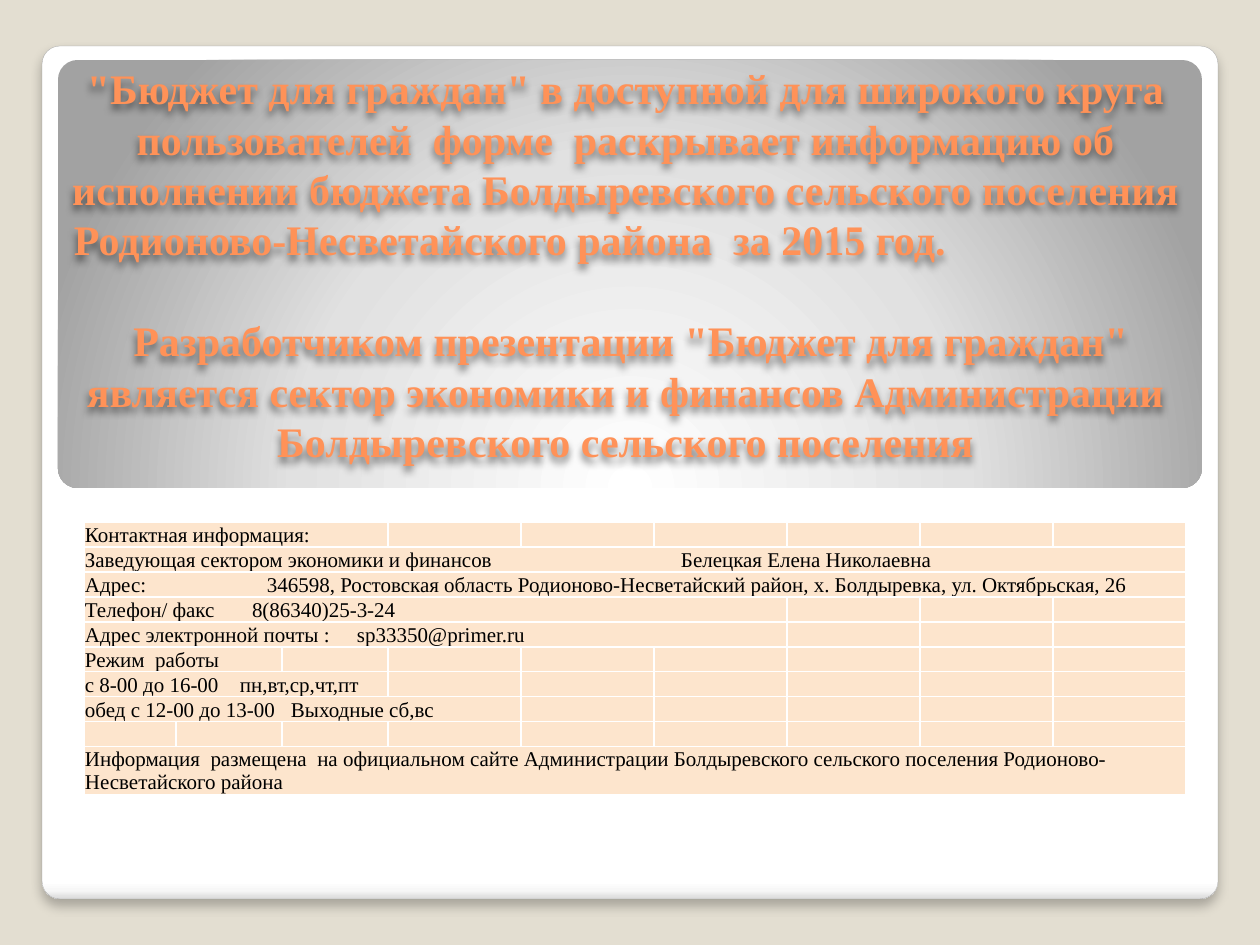
"""Builds the contact slide of a citizens' budget presentation."""
import pptx
import pptx.dml.color
import pptx.enum.shapes
import pptx.enum.text
import pptx.oxml
import pptx.oxml.ns
import pptx.util
import lxml.etree

PX = 914400 / 126
NS = 'xmlns:a="http://schemas.openxmlformats.org/drawingml/2006/main"'
FONT = "Times New Roman"
COLORS = {"background": "E3DED1", "panel_line": "A4A4A4", "heading": "FF9258",
          "cell": "FDE5CD", "border": "FFFFFF", "text": "000000"}
ALIGN = pptx.enum.text.PP_ALIGN
qn = pptx.oxml.ns.qn


def write(paragraph, text, size=12, color="text", bold=False, align=ALIGN.LEFT):
    paragraph.alignment = align
    run = paragraph.add_run()
    run.text = text
    run.font.size = pptx.util.Pt(size)
    run.font.bold = bold
    run.font.color.rgb = pptx.dml.color.RGBColor.from_string(COLORS[color])
    run.font.name = FONT


def shadow_xml(alpha, blur, distance):
    return pptx.oxml.parse_xml(
        f'<a:effectLst {NS}><a:outerShdw blurRad="{blur * 12700}" dist="{distance * 12700}" '
        f'dir="5400000" algn="tl" rotWithShape="0"><a:srgbClr val="000000">'
        f'<a:alpha val="{alpha * 1000}"/></a:srgbClr></a:outerShdw></a:effectLst>')


presentation = pptx.Presentation()
presentation.slide_width = pptx.util.Inches(10)
presentation.slide_height = pptx.util.Inches(7.5)
slide = presentation.slides.add_slide(presentation.slide_layouts[5])
slide.background.fill.solid()
slide.background.fill.fore_color.rgb = pptx.dml.color.RGBColor.from_string(COLORS["background"])

panels = [
    ((42, 46, 1176, 853), 0.021,
     [(0, "FFFFFF"), (98, "FFFFFF"), (99, "F7F7F7"), (100, "DADADA")],
     '<a:lin ang="5400000" scaled="0"/>', True),
    ((58, 60, 1144, 428), 0.046,
     [(0, "FFFFFF"), (55, "E1E1E1"), (100, "A2A2A2")],
     '<a:path path="circle"><a:fillToRect l="50000" t="175000" r="50000" b="-75000"/></a:path>',
     False),
]
for box, corner, stops, direction, framed in panels:
    panel = slide.shapes.add_shape(pptx.enum.shapes.MSO_SHAPE.ROUNDED_RECTANGLE,
                                   *[round(length * PX) for length in box])
    panel.adjustments[0] = corner
    panel.shadow.inherit = False
    panel.line.fill.background()
    stop_list = "".join(f'<a:gs pos="{position * 1000}"><a:srgbClr val="{color}"/></a:gs>'
                        for position, color in stops)
    properties = panel.element.spPr
    properties.insert(2, pptx.oxml.parse_xml(
        f'<a:gradFill {NS} rotWithShape="1"><a:gsLst>{stop_list}</a:gsLst>{direction}</a:gradFill>'))
    if framed:
        panel.line.color.rgb = pptx.dml.color.RGBColor.from_string(COLORS["panel_line"])
        panel.line.width = pptx.util.Pt(0.16)
        properties.replace(properties.find(qn("a:effectLst")), shadow_xml(25, 6, 4))

heading = slide.shapes.title
heading.element.getparent().append(heading.element)
heading.left, heading.top, heading.width, heading.height = [
    round(length * PX) for length in (65, 56, 1121, 417)]
heading.element.spPr.append(shadow_xml(50, 4, 3))
frame = heading.text_frame
frame.word_wrap = True
frame.auto_size = pptx.enum.text.MSO_AUTO_SIZE.NONE
frame.vertical_anchor = pptx.enum.text.MSO_ANCHOR.MIDDLE
frame.margin_left = frame.margin_right = frame.margin_top = frame.margin_bottom = round(6 * PX)
statements = [
    ('"Бюджет для граждан" в доступной для широкого круга пользователей  форме  раскрывает '
     'информацию об исполнении бюджета Болдыревского сельского поселения', ALIGN.CENTER, 0, 0),
    ("Родионово-Несветайского района  за 2015 год.", ALIGN.LEFT, 29, 3),
    (' Разработчиком презентации "Бюджет для граждан" является сектор экономики и финансов '
     'Администрации Болдыревского сельского поселения', ALIGN.CENTER, 0, 0),
]
for index, (statement, align, gap, indent) in enumerate(statements):
    paragraph = frame.add_paragraph() if index else frame.paragraphs[0]
    paragraph.line_spacing = pptx.util.Pt(28.75)
    paragraph.space_before = pptx.util.Pt(0)
    paragraph.space_after = pptx.util.Pt(gap)
    paragraph._p.get_or_add_pPr().set("marL", str(round(indent * PX)))
    write(paragraph, statement, size=24, color="heading", bold=True, align=align)

contact_rows = [
    ("Контактная информация:", 3, 0),
    ("Заведующая сектором экономики и финансов\tБелецкая Елена Николаевна", 9, 596),
    ("Адрес:\t346598, Ростовская область Родионово-Несветайский район, х. Болдыревка, "
     "ул. Октябрьская, 26", 9, 182),
    ("Телефон/ факс\t8(86340)25-3-24", 6, 167),
    ("Адрес электронной почты :\tsp33350@primer.ru", 6, 272),
    ("Режим  работы", 2, 0),
    ("с 8-00 до 16-00\tпн,вт,ср,чт,пт", 3, 155),
    ("обед с 12-00 до 13-00\tВыходные сб,вс", 4, 206),
    ("", 1, 0),
    ("Информация  размещена  на официальном сайте Администрации Болдыревского сельского "
     "поселения Родионово-Несветайского района", 9, 0),
]
column_widths = [92, 106, 106] + [133] * 6
row_heights = [25] * 9 + [48]
contacts = slide.shapes.add_table(
    len(row_heights), len(column_widths), round(84 * PX), round(522 * PX),
    round(sum(column_widths) * PX), round(sum(row_heights) * PX)).table
for column, width in zip(contacts.columns, column_widths):
    column.width = round(width * PX)
for row, height in zip(contacts.rows, row_heights):
    row.height = round(height * PX)

for row_index, (text, span, tab) in enumerate(contact_rows):
    for column_index in range(len(column_widths)):
        cell = contacts.cell(row_index, column_index)
        cell.margin_left = cell.margin_right = cell.margin_top = round(PX)
        cell.margin_bottom = 0
        cell.vertical_anchor = pptx.enum.text.MSO_ANCHOR.BOTTOM
        cell_properties = cell._tc.get_or_add_tcPr()
        for side in ("lnL", "lnR", "lnT", "lnB"):
            cell_properties.append(pptx.oxml.parse_xml(
                f'<a:{side} {NS} w="12700"><a:solidFill><a:srgbClr val="{COLORS["border"]}"/>'
                f'</a:solidFill></a:{side}>'))
        cell.fill.solid()
        cell.fill.fore_color.rgb = pptx.dml.color.RGBColor.from_string(COLORS["cell"])
        paragraph = cell.text_frame.paragraphs[0]
        if column_index == 0 and text:
            write(paragraph, text)
            if tab:
                tabs = lxml.etree.SubElement(paragraph._p.get_or_add_pPr(), qn("a:tabLst"))
                lxml.etree.SubElement(tabs, qn("a:tab"), pos=str(round(tab * PX)), algn="l")
        else:
            blank = lxml.etree.SubElement(paragraph._p, qn("a:endParaRPr"), sz="1000")
            lxml.etree.SubElement(blank, qn("a:latin"), typeface=FONT)
    if span > 1:
        contacts.cell(row_index, 0).merge(contacts.cell(row_index, span - 1))

presentation.save("out.pptx")
